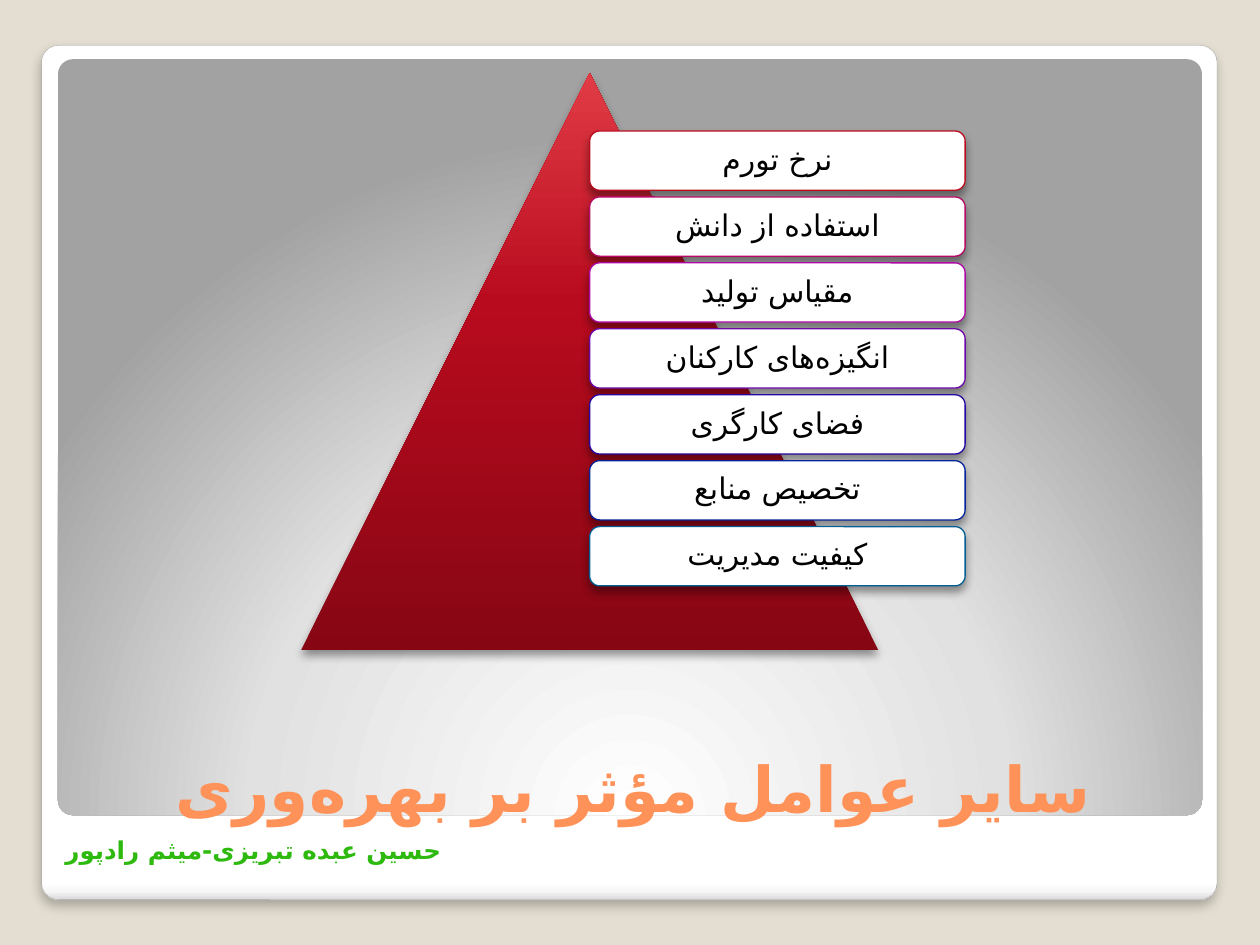
from pptx import Presentation
from pptx.dml.color import RGBColor
from pptx.enum.shapes import MSO_SHAPE
from pptx.enum.text import MSO_ANCHOR, PP_ALIGN
from pptx.oxml import parse_xml
from pptx.oxml.ns import nsdecls, qn
from pptx.util import Inches, Pt

FONT = "DejaVu Sans"
BEIGE = RGBColor(0xE3, 0xDE, 0xD1)
WHITE = RGBColor(0xFF, 0xFF, 0xFF)
BLACK = RGBColor(0x00, 0x00, 0x00)
GREY = RGBColor(0xA4, 0xA4, 0xA4)
GREEN = RGBColor(0x2D, 0xB9, 0x0E)
ORANGE = RGBColor(0xFF, 0x92, 0x58)

ZWNJ = chr(0x200C)  # zero-width non-joiner, keeps Persian word parts apart
TITLE = ZWNJ.join(["سایر عوامل مؤثر بر بهره", "وری"])
AUTHORS = "حسین عبده تبریزی-میثم رادپور"
FACTORS = [
    ("نرخ تورم", RGBColor(0xBC, 0x0B, 0x1F)),
    ("استفاده از دانش", RGBColor(0xB6, 0x09, 0x65)),
    ("مقیاس تولید", RGBColor(0xB0, 0x08, 0xA7)),
    (ZWNJ.join(["انگیزه", "های کارکنان"]), RGBColor(0x6D, 0x07, 0xA9)),
    ("فضای کارگری", RGBColor(0x26, 0x05, 0xA2)),
    ("تخصیص منابع", RGBColor(0x04, 0x23, 0x9B)),
    ("کیفیت مدیریت", RGBColor(0x03, 0x5E, 0x94)),
]

FRAME_STOPS = [(0, "FFFFFF"), (98, "FFFFFF"), (99, "F7F7F7"), (100, "DADADA")]
PANEL_STOPS = [(0, "FFFFFF"), (55, "E1E1E1"), (100, "A2A2A2")]
PYRAMID_STOPS = [(0, "870614"), (60, "B80B1E"), (100, "E13C45")]
DOWN = '<a:lin ang="5400000" scaled="0"/>'
UP = '<a:lin ang="16200000" scaled="0"/>'
FROM_BELOW = ('<a:path path="circle"><a:fillToRect l="50000" t="175000" '
              'r="50000" b="-75000"/></a:path>')
SOFT_SHADOW = (25, 6, 4)
DEEP_SHADOW = (40, 5.2, 3)

BOX_LEFT, BOX_TOP, BOX_W, BOX_H = 4.68, 1.04, 2.98, 0.47
BOX_STEP = 3.14 / 6


def set_gradient(sp, stops, direction):
    sp.fill.background()
    old = sp.element.spPr.find(qn("a:noFill"))
    marks = "".join(f'<a:gs pos="{pos * 1000}"><a:srgbClr val="{color}"/></a:gs>'
                    for pos, color in stops)
    grad = parse_xml(f'<a:gradFill {nsdecls("a")} rotWithShape="1">'
                     f"<a:gsLst>{marks}</a:gsLst>{direction}</a:gradFill>")
    old.getparent().replace(old, grad)


def set_shadow(sp, opacity, blur, distance):
    """Cast a black shadow straight down; blur and distance are in points."""
    effects = sp.element.spPr.find(qn("a:effectLst"))
    effects.append(parse_xml(
        f'<a:outerShdw {nsdecls("a")} blurRad="{Pt(blur)}" dist="{Pt(distance)}" '
        f'dir="5400000" algn="ctr" rotWithShape="0"><a:srgbClr val="000000">'
        f'<a:alpha val="{opacity * 1000}"/></a:srgbClr></a:outerShdw>'))


def add_shape(s, kind, box, fill=None, gradient=None, line=None, width=0.75,
              shadow=None, radius=None):
    sp = s.shapes.add_shape(kind, *map(Inches, box))
    sp.shadow.inherit = False
    if radius is not None:
        sp.adjustments[0] = radius
    if gradient:
        set_gradient(sp, *gradient)
    else:
        sp.fill.solid()
        sp.fill.fore_color.rgb = fill
    if line is None:
        sp.line.fill.background()
    else:
        sp.line.color.rgb = line
        sp.line.width = Pt(width)
    if shadow:
        set_shadow(sp, *shadow)
    return sp


def write(sp, text, size, color, bold=False, align=PP_ALIGN.CENTER, rtl=True,
          anchor=MSO_ANCHOR.MIDDLE, spacing=None, inset=None):
    tf = sp.text_frame
    tf.word_wrap = True
    tf.vertical_anchor = anchor
    if inset is not None:
        tf.margin_left = tf.margin_right = Inches(inset)
        tf.margin_top = tf.margin_bottom = Inches(inset)
    p = tf.paragraphs[0]
    p.alignment = align
    if spacing:
        p.line_spacing = spacing
    r = p.add_run()
    r.text = text
    r.font.name = FONT
    r.font.size = Pt(size)
    r.font.bold = bold
    r.font.color.rgb = color
    if rtl:
        sp.element.find(".//" + qn("a:pPr")).set("rtl", "1")
    sp.element.find(".//" + qn("a:rPr")).append(
        parse_xml(f'<a:cs {nsdecls("a")} typeface="{FONT}"/>'))


def main():
    prs = Presentation()
    prs.slide_width, prs.slide_height = Inches(10), Inches(7.5)
    s = prs.slides.add_slide(prs.slide_layouts[6])
    s.background.fill.solid()
    s.background.fill.fore_color.rgb = BEIGE

    rounded = MSO_SHAPE.ROUNDED_RECTANGLE
    add_shape(s, rounded, (0.33, 0.36, 9.33, 6.78), gradient=(FRAME_STOPS, DOWN),
              line=GREY, width=0.16, shadow=SOFT_SHADOW, radius=0.02)
    add_shape(s, rounded, (0.46, 0.47, 9.08, 6),
              gradient=(PANEL_STOPS, FROM_BELOW), radius=0.02)

    authors = s.shapes.add_textbox(*map(Inches, (0.42, 6.58, 3.42, 0.34)))
    write(authors, AUTHORS, 14, GREEN, bold=True, align=PP_ALIGN.LEFT, rtl=False,
          anchor=MSO_ANCHOR.TOP)
    title = s.shapes.add_textbox(*map(Inches, (0.55, 5.45, 8.95, 1.15)))
    write(title, TITLE, 36, ORANGE, bold=True, anchor=MSO_ANCHOR.BOTTOM)

    add_shape(s, MSO_SHAPE.ISOSCELES_TRIANGLE, (2.39, 0.58, 4.58, 4.58),
              gradient=(PYRAMID_STOPS, UP), shadow=DEEP_SHADOW)
    for i, (factor, color) in enumerate(FACTORS):
        box = add_shape(s, rounded, (BOX_LEFT, BOX_TOP + i * BOX_STEP, BOX_W, BOX_H),
                        fill=WHITE, line=color, shadow=DEEP_SHADOW, radius=0.17)
        write(box, factor, 17, BLACK, spacing=0.9, inset=0.09)

    prs.save("out.pptx")


if __name__ == "__main__":
    main()
